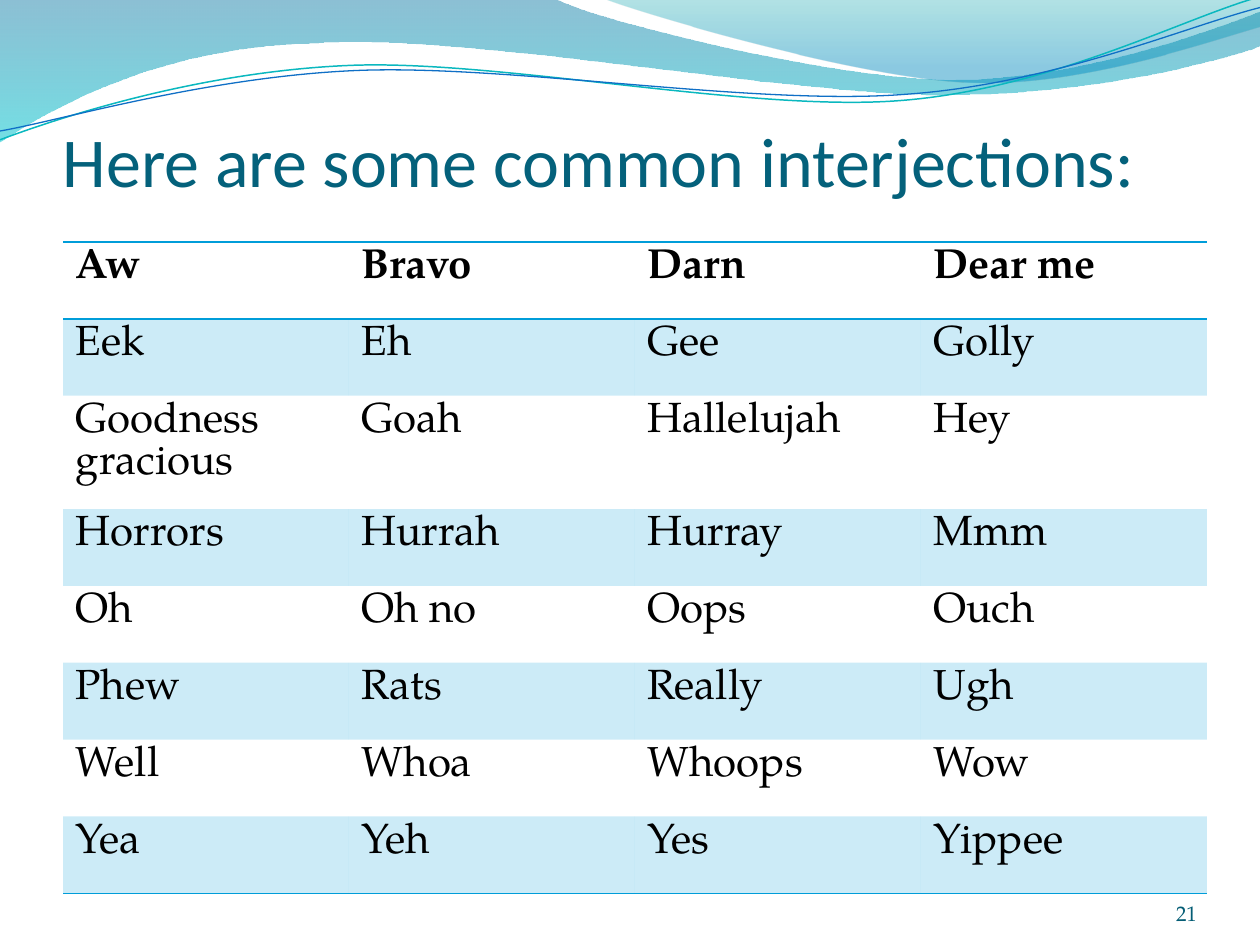
from lxml import etree
from pptx import Presentation
from pptx.dml.color import RGBColor
from pptx.enum.text import MSO_ANCHOR, PP_ALIGN
from pptx.oxml.ns import qn
from pptx.util import Inches, Pt

BOTTOM = MSO_ANCHOR.BOTTOM
LEFT, RIGHT = PP_ALIGN.LEFT, PP_ALIGN.RIGHT
HEADING_FONT, BODY_FONT = "Calibri", "TeX Gyre Pagella"
ACCENT = "009DD9"
PLAIN_TABLE_STYLE = "{2D5ABB26-0587-4C30-8999-92F81FD0307C}"

TITLE = "Here are some common interjections:"
PAGE_NUMBER = "21"
INTERJECTIONS = [
    ("Aw", "Bravo", "Darn", "Dear me"),
    ("Eek", "Eh", "Gee", "Golly"),
    ("Goodness gracious", "Goah", "Hallelujah", "Hey"),
    ("Horrors", "Hurrah", "Hurray", "Mmm"),
    ("Oh", "Oh no", "Oops", "Ouch"),
    ("Phew", "Rats", "Really", "Ugh"),
    ("Well", "Whoa", "Whoops", "Wow"),
    ("Yea", "Yeh", "Yes", "Yippee"),
]

# A path is a list of points: two numbers for a straight segment,
# six (two control points and an end) for a cubic curve.
# A gradient stop is position, colour, opacity in percent.
WAVES = [
    ([(0, 0), (4.4, -0.01), (4.76, 0.17, 6.64, 0.63, 7.58, 0.63),
      (8.53, 0.63, 9.58, 0.26, 10, 0.09), (10.01, 0.36),
      (9.83, 0.44, 8.7, 0.76, 7.46, 0.75), (6.22, 0.75, 3.82, 0.28, 2.57, 0.34),
      (1.29, 0.36, 0.46, 0.83, -0.01, 1.13)],
     [(0, "0074A1", 45), (1, "00C6CF", 55)]),
    ([(4.79, -0.01), (5.09, 0.11, 6.82, 0.62, 7.69, 0.65),
      (8.56, 0.69, 9.61, 0.32, 10, 0.21), (10, 0)],
     [(0, "00A1A9", 30), (0.8, "008BBF", 45)]),
]
WAVE_LINES = [
    ([(0, 1.11), (0.48, 0.93, 1.58, 0.57, 2.77, 0.52),
      (3.95, 0.47, 5.93, 0.89, 7.13, 0.8), (8.33, 0.71, 9.38, 0.15, 9.98, -0.02)],
     "0AB8BF", 0.85),
    ([(0, 1.04), (0.47, 0.96, 1.64, 0.61, 2.83, 0.56),
      (4.03, 0.51, 5.97, 0.84, 7.17, 0.75), (8.36, 0.67, 9.41, 0.21, 10, 0.06)],
     "0F6FC6", 0.75),
]


def rgb(value):
    return RGBColor.from_string(value)


def set_opacity(fill_element, percents):
    for color, percent in zip(fill_element.iter(qn("a:srgbClr")), percents):
        etree.SubElement(color, qn("a:alpha"), val=str(percent * 1000))


def add_outline(page, path, close):
    """Draw the segment ends as a freeform, then bend the cubic segments."""
    ends = [(Inches(segment[-2]), Inches(segment[-1])) for segment in path]
    builder = page.shapes.build_freeform(*ends[0])
    builder.add_line_segments(ends[1:], close=close)
    shape = builder.convert_to_shape()
    shape.shadow.inherit = False
    straight = list(shape._element.iter(qn("a:lnTo")))
    for line, segment in zip(straight, path[1:]):
        if len(segment) == 6:
            curve = etree.Element(qn("a:cubicBezTo"))
            for x, y in zip(segment[::2], segment[1::2]):
                etree.SubElement(curve, qn("a:pt"), x=str(Inches(x) - shape.left),
                                 y=str(Inches(y) - shape.top))
            line.getparent().replace(line, curve)
    return shape


def add_wave(page, path, stops):
    shape = add_outline(page, path, True)
    shape.line.fill.background()
    shape.fill.gradient()
    shape.fill.gradient_angle = 270
    for stop, (position, color, _) in zip(shape.fill.gradient_stops, stops):
        stop.position = position
        stop.color.rgb = rgb(color)
    set_opacity(shape._element.spPr.find(qn("a:gradFill")), [stop[2] for stop in stops])


def add_wave_line(page, path, color, width):
    shape = add_outline(page, path, False)
    shape.fill.background()
    shape.line.color.rgb = rgb(color)
    shape.line.width = Pt(width)


def style(font, name, size, color, bold=False):
    font.name = name
    font.size = Pt(size)
    font.bold = bold
    font.color.rgb = rgb(color)


def add_text(page, place, text, top_inset, align, *look):
    box = page.shapes.add_textbox(*map(Inches, place))
    frame = box.text_frame
    frame.word_wrap = True
    frame.vertical_anchor = BOTTOM
    frame.margin_left = frame.margin_right = frame.margin_bottom = 0
    frame.margin_top = Inches(top_inset)
    frame.text = text
    frame.paragraphs[0].alignment = align
    style(frame.paragraphs[0].font, *look)


def add_borders(cell, sides):
    properties = cell._tc.get_or_add_tcPr()
    for index, side in enumerate(sides):
        line = etree.Element(qn(f"a:ln{side}"), w=str(Pt(1)))
        fill = etree.SubElement(line, qn("a:solidFill"))
        etree.SubElement(fill, qn("a:srgbClr"), val=ACCENT)
        properties.insert(index, line)


def add_word_table(page, rows):
    row_count, column_count = len(rows), len(rows[0])
    frame = page.shapes.add_table(row_count, column_count, Inches(0.5), Inches(1.92),
                                  Inches(9.08), Inches(0.61 * row_count))
    frame.height = Inches(5.17)
    table = frame.table
    table.horz_banding = False
    table._tbl.tblPr.find(qn("a:tableStyleId")).text = PLAIN_TABLE_STYLE
    borders = {0: "TB", row_count - 1: "B"}
    for r, words in enumerate(rows):
        for c, word in enumerate(words):
            cell = table.cell(r, c)
            cell.text = word
            # Row heights follow the run size, so the font is set on the run.
            span = cell.text_frame.paragraphs[0].runs[0]
            style(span.font, BODY_FONT, 24, "000000", r == 0)
            if r % 2:
                cell.fill.solid()
                cell.fill.fore_color.rgb = rgb(ACCENT)
                set_opacity(cell._tc.tcPr, [20])
            else:
                cell.fill.background()
            add_borders(cell, borders.get(r, ""))


def main():
    deck = Presentation()
    deck.slide_width, deck.slide_height = Inches(10), Inches(7.5)
    page = deck.slides.add_slide(deck.slide_layouts[6])
    for wave in WAVES:
        add_wave(page, *wave)
    for wave_line in WAVE_LINES:
        add_wave_line(page, *wave_line)
    add_text(page, (0.5, 0.75, 9, 0.85), TITLE, 0.05, LEFT, HEADING_FONT, 40, "04617B")
    add_word_table(page, INTERJECTIONS)
    add_text(page, (8.67, 6.95, 0.83, 0.4), PAGE_NUMBER, 0, RIGHT, BODY_FONT, 12, "045D75")
    deck.save("out.pptx")


if __name__ == "__main__":
    main()
